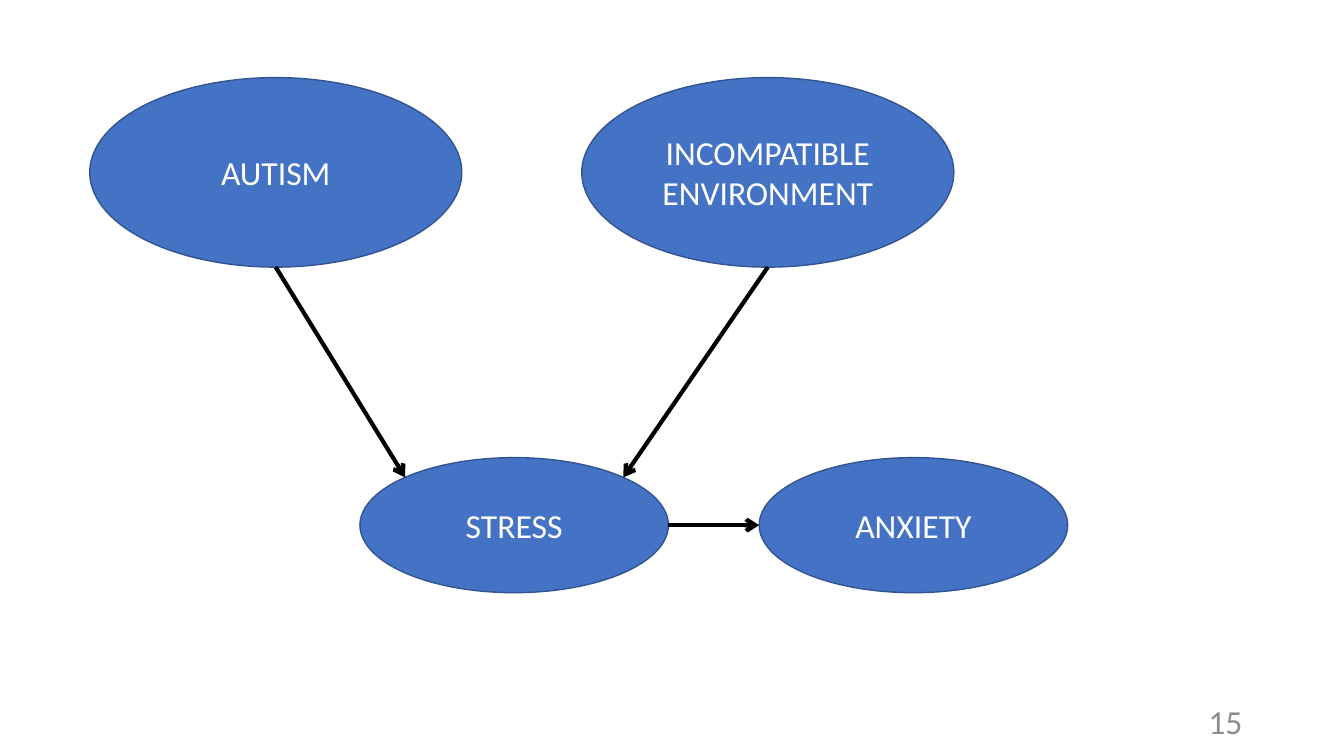
"""Build the slide that links autism and environment to stress and anxiety."""
from dataclasses import dataclass
from math import cos, radians, sin

from lxml import etree
from pptx import Presentation
from pptx.dml.color import RGBColor
from pptx.enum import shapes, text
from pptx.oxml.ns import qn
from pptx.slide import Slide
from pptx.text.text import TextFrame
from pptx.util import Inches, Pt


@dataclass(frozen=True)
class Theme:
    font: str = "Calibri"
    size: int = 24
    fill: str = "4472C4"
    edge: str = "325491"
    label: str = "FFFFFF"
    arrow: str = "000000"
    number: str = "8C8C8C"


@dataclass(frozen=True)
class Node:
    label: str
    left: float
    top: float
    width: float
    height: float

    def point(self, angle: float) -> tuple[float, float]:
        turn = radians(angle)
        return (self.left + self.width / 2 * (1 + cos(turn)),
                self.top + self.height / 2 * (1 - sin(turn)))


@dataclass(frozen=True)
class Link:
    start: Node
    leave: float
    end: Node
    enter: float


THEME = Theme()
CAUSE = (3.69, 1.88)
EFFECT = (3.06, 1.34)
AUTISM = Node("AUTISM", 0.89, 0.77, *CAUSE)
PLACE = Node("INCOMPATIBLE\vENVIRONMENT", 5.77, 0.77, *CAUSE)
STRESS = Node("STRESS", 3.57, 4.54, *EFFECT)
WORRY = Node("ANXIETY", 7.53, 4.54, *EFFECT)
NODES = (AUTISM, PLACE, STRESS, WORRY)
LINKS = (
    Link(AUTISM, 270, STRESS, 135),
    Link(PLACE, 270, STRESS, 45),
    Link(STRESS, 0, WORRY, 180),
)


def write(frame: TextFrame, words: str, color: str, align: text.PP_ALIGN) -> None:
    frame.word_wrap = True
    frame.vertical_anchor = text.MSO_ANCHOR.MIDDLE
    line = frame.paragraphs[0]
    line.text = words
    line.alignment = align
    line.font.name = THEME.font
    line.font.size = Pt(THEME.size)
    line.font.color.rgb = RGBColor.from_string(color)


def draw_node(slide: Slide, node: Node) -> None:
    oval = slide.shapes.add_shape(
        shapes.MSO_SHAPE.OVAL, Inches(node.left), Inches(node.top),
        Inches(node.width), Inches(node.height))
    oval.shadow.inherit = False
    oval.fill.solid()
    oval.fill.fore_color.rgb = RGBColor.from_string(THEME.fill)
    oval.line.color.rgb = RGBColor.from_string(THEME.edge)
    oval.line.width = Pt(1)
    write(oval.text_frame, node.label, THEME.label, text.PP_ALIGN.CENTER)


def draw_link(slide: Slide, link: Link) -> None:
    ends = link.start.point(link.leave) + link.end.point(link.enter)
    arrow = slide.shapes.add_connector(
        shapes.MSO_CONNECTOR.STRAIGHT, *(Inches(end) for end in ends))
    arrow.line.color.rgb = RGBColor.from_string(THEME.arrow)
    arrow.line.width = Pt(3)
    props = arrow.element.spPr
    etree.SubElement(props.find(qn("a:ln")), qn("a:tailEnd"), type="arrow")
    etree.SubElement(props, qn("a:effectLst"))


def main() -> None:
    deck = Presentation()
    deck.slide_width, deck.slide_height = Inches(13.33), Inches(7.5)
    slide = deck.slides.add_slide(deck.slide_layouts[6])
    for node in NODES:
        draw_node(slide, node)
    for link in LINKS:
        draw_link(slide, link)
    number = slide.shapes.add_textbox(
        Inches(9.42), Inches(6.95), Inches(3), Inches(0.4))
    write(number.text_frame, "15", THEME.number, text.PP_ALIGN.RIGHT)
    deck.save("out.pptx")


if __name__ == "__main__":
    main()
